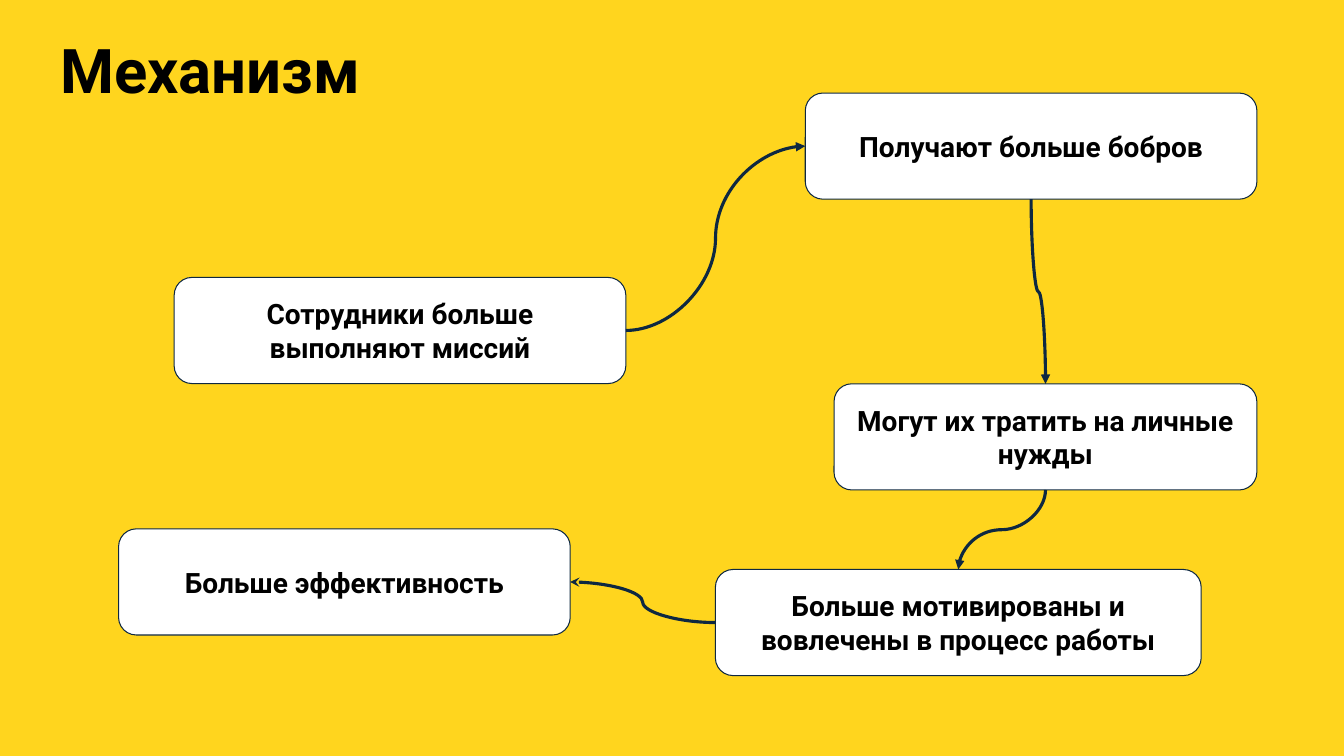
import pptx
import pptx.util
import pptx.dml.color
import pptx.enum.shapes
import pptx.enum.text
import pptx.oxml
import pptx.oxml.ns

Pt = pptx.util.Pt
ALIGN = pptx.enum.text.PP_ALIGN
MIDDLE = pptx.enum.text.MSO_ANCHOR.MIDDLE
NAVY = "0E2841"
TOP, LEFT, BOTTOM, RIGHT = range(4)


def color(code):
    return pptx.dml.color.RGBColor.from_string(code)


def write(shape, text, size, align, inset):
    """Put one bold run, centred vertically, into the shape."""
    frame = shape.text_frame
    frame.word_wrap = True
    frame.vertical_anchor = MIDDLE
    frame.margin_left = Pt(inset)
    frame.margin_right = frame.margin_top = frame.margin_bottom = Pt(7.2)
    para = frame.paragraphs[0]
    para.alignment = align
    run = para.add_run()
    run.text = text
    run.font.name = "Roboto"
    run.font.size = Pt(size)
    run.font.bold = True
    run.font.color.rgb = color("000000")


deck = pptx.Presentation()
deck.slide_width, deck.slide_height = Pt(960), Pt(540)
slide = deck.slides.add_slide(deck.slide_layouts[6])
slide.background.fill.solid()
slide.background.fill.fore_color.rgb = color("FFD51E")

title = slide.shapes.add_textbox(Pt(0), Pt(0), Pt(828), Pt(104.4))
write(title, "Механизм", 44, ALIGN.LEFT, 43.2)
title.text_frame.paragraphs[0].line_spacing = 0.9

# Boxes: left, top, width, text
steps = {
    "tasks": (124.4, 198.2, 322.6, "Сотрудники больше выполняют миссий"),
    "earn": (575.2, 66.5, 322.6, "Получают больше бобров"),
    "spend": (595.8, 274.2, 302, "Могут их тратить на личные нужды"),
    "drive": (511, 406.8, 347, "Больше мотивированы и вовлечены в процесс работы"),
    "result": (84.7, 377.8, 322.6, "Больше эффективность"),
}
boxes = {}
for name, (left, top, width, text) in steps.items():
    box = slide.shapes.add_shape(
        pptx.enum.shapes.MSO_SHAPE.ROUNDED_RECTANGLE,
        Pt(left), Pt(top), Pt(width), Pt(75.8))
    box.shadow.inherit = False
    box.fill.solid()
    box.fill.fore_color.rgb = color("FFFFFF")
    box.line.color.rgb = color(NAVY)
    box.line.width = Pt(0.75)
    write(box, text, 20, ALIGN.CENTER, 7.2)
    boxes[name] = box

# Arrows: start box and side, end box and side, head
links = [
    ("tasks", RIGHT, "earn", LEFT, "triangle"),
    ("earn", BOTTOM, "spend", TOP, "triangle"),
    ("spend", BOTTOM, "drive", TOP, "triangle"),
    ("drive", LEFT, "result", RIGHT, "stealth"),
]
for start, exit_side, end, entry, head in links:
    link = slide.shapes.add_connector(
        pptx.enum.shapes.MSO_CONNECTOR.CURVE, Pt(0), Pt(0), Pt(9), Pt(9))
    link.begin_connect(boxes[start], exit_side)
    link.end_connect(boxes[end], entry)
    link.line.color.rgb = color(NAVY)
    link.line.width = Pt(2.25)
    props = link._element.spPr

    # A curve that leaves downwards is a sideways curve given a quarter turn
    if exit_side == BOTTOM:
        run_x = link.end_x - link.begin_x
        drop = link.end_y - link.begin_y
        mid_x = (link.begin_x + link.end_x) // 2
        mid_y = (link.begin_y + link.end_y) // 2
        sign = 1 if run_x > 0 else -1
        link.begin_x = mid_x + sign * drop // 2
        link.end_x = mid_x - sign * drop // 2
        link.begin_y = mid_y - abs(run_x) // 2
        link.end_y = mid_y + abs(run_x) // 2
        turn = 270 if run_x > 0 else 90
        props.find(pptx.oxml.ns.qn("a:xfrm")).set("rot", str(turn * 60000))

    tail = pptx.oxml.parse_xml(
        f'<a:tailEnd {pptx.oxml.ns.nsdecls("a")} type="{head}"/>')
    props.find(pptx.oxml.ns.qn("a:ln")).append(tail)
    props.append(pptx.oxml.parse_xml(
        f'<a:effectLst {pptx.oxml.ns.nsdecls("a")}/>'))

deck.save("out.pptx")
